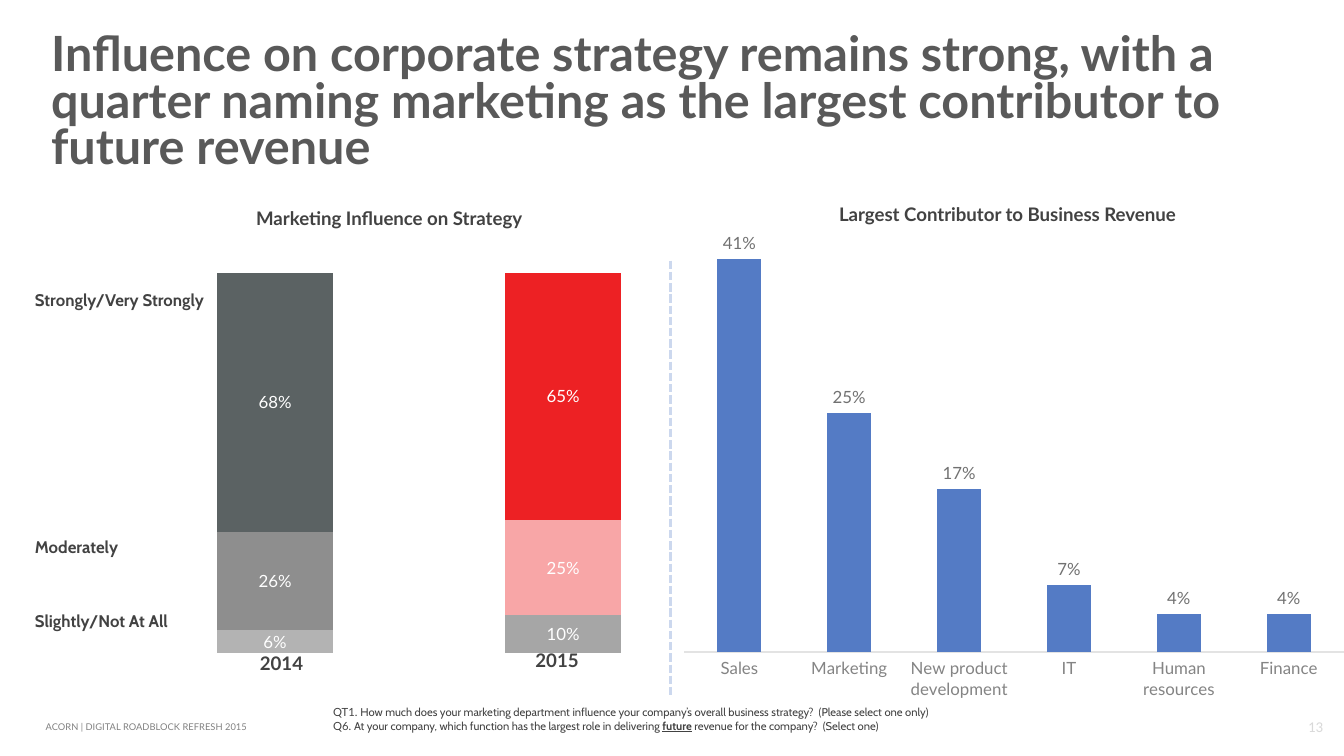
from dataclasses import dataclass

from lxml import etree
from pptx import Presentation
from pptx.chart.data import CategoryChartData
from pptx.dml.color import RGBColor
from pptx.enum.chart import XL_CHART_TYPE, XL_LABEL_POSITION, XL_TICK_MARK
from pptx.enum.dml import MSO_LINE
from pptx.enum.shapes import MSO_CONNECTOR
from pptx.enum.text import MSO_ANCHOR, PP_ALIGN
from pptx.oxml.ns import qn
from pptx.util import Inches, Pt

LEFT, CENTER = PP_ALIGN.LEFT, PP_ALIGN.CENTER
TOP, MIDDLE, BOTTOM = MSO_ANCHOR.TOP, MSO_ANCHOR.MIDDLE, MSO_ANCHOR.BOTTOM
COLUMN, STACKED = XL_CHART_TYPE.COLUMN_CLUSTERED, XL_CHART_TYPE.COLUMN_STACKED
OUTSIDE, NO_TICK = XL_LABEL_POSITION.OUTSIDE_END, XL_TICK_MARK.NONE
DASH, STRAIGHT = MSO_LINE.SQUARE_DOT, MSO_CONNECTOR.STRAIGHT

COLS, ROWS = 100, 56.25  # square grid cells, a tenth of an inch each


@dataclass(frozen=True)
class Theme:
    head: str = "Lato"
    body: str = "Cabin"
    num: str = "Calibri"
    title: str = "595959"
    ink: str = "424242"
    foot: str = "808080"
    page: str = "D9D9D9"
    axis: str = "848484"
    value: str = "717171"
    rule: str = "E3E3E3"
    split: str = "CCD8EE"
    bar: str = "547BC5"
    white: str = "FFFFFF"
    low: tuple = ("A6A6A6", "B3B3B3")
    mid: tuple = ("8E8E8E", "8E8E8E", "F8A6A7")
    high: tuple = ("849200", "5B6263", "ED2124")
    big: float = 26
    sub: float = 10
    label: float = 9
    pager: float = 8
    note: float = 6
    tiny: float = 5


def unit(cells):
    return Inches(cells / 10)


def rgb(code):
    return RGBColor.from_string(code)


class Deck:
    def __init__(self, theme):
        self.theme = theme
        self.prs = Presentation()
        self.prs.slide_width, self.prs.slide_height = unit(COLS), unit(ROWS)
        self.slide = self.prs.slides.add_slide(self.prs.slide_layouts[5])
        self.shapes = self.slide.shapes

    def font(self, font, size, color, face=None, bold=False):
        font.size, font.bold = Pt(size), bold
        font.name = face or self.theme.head
        font.color.rgb = rgb(color)

    def run(self, para, text, size, color, face=None, bold=False, under=False):
        run = para.add_run()
        run.text = text
        self.font(run.font, size, color, face, bold)
        if under:
            run.font.underline = True

    def title(self, box, text):
        shape = self.shapes.title
        shape.left, shape.top, shape.width, shape.height = map(unit, box)
        frame = shape.text_frame
        frame.word_wrap, frame.vertical_anchor = True, MIDDLE
        para = frame.paragraphs[0]
        para.alignment, para.line_spacing = LEFT, 0.8
        self.run(para, text, self.theme.big, self.theme.title, bold=True)

    def frame(self, box, anchor=TOP, inset=0):
        frame = self.shapes.add_textbox(*map(unit, box)).text_frame
        frame.word_wrap, frame.vertical_anchor = True, anchor
        if inset is not None:
            frame.margin_left = frame.margin_right = unit(inset)
            frame.margin_top = frame.margin_bottom = unit(inset)
        return frame

    def text(self, box, text, size, color, align=CENTER, anchor=TOP, **style):
        para = self.frame(box, anchor).paragraphs[0]
        para.alignment = align
        self.run(para, text, size, color, **style)

    def notes(self, box, lines):
        """Add one paragraph per line; each line is a list of (text, style)."""
        frame = self.frame(box, inset=None)
        for i, line in enumerate(lines):
            para = frame.add_paragraph() if i else frame.paragraphs[0]
            for text, style in line:
                self.run(para, text, self.theme.note, self.theme.ink, **style)

    def split(self, col, top, end):
        line = self.shapes.add_connector(STRAIGHT, *map(unit, (col, top, col, end)))
        line.line.color.rgb = rgb(self.theme.split)
        line.line.width, line.line.dash_style = Pt(1.5), DASH
        etree.SubElement(line._element.spPr, qn("a:effectLst"))

    def levels(self, box, rows):
        """Add a one-column table of (text, height, anchor, top margin)."""
        table = self.shapes.add_table(len(rows), 1, *map(unit, box)).table
        table.first_row = table.horz_banding = False
        for i, (text, height, anchor, margin) in enumerate(rows):
            table.rows[i].height = unit(height)
            cell = table.cell(i, 0)
            cell.fill.background()
            cell.vertical_anchor, cell.margin_top = anchor, unit(margin)
            self.run(cell.text_frame.paragraphs[0], text, self.theme.label,
                     self.theme.ink, self.theme.body, True)

    def chart(self, kind, box, area, cats, series, peak, tint):
        """Series are (values, (colour, *point colours)); area is percent of box."""
        data = CategoryChartData(number_format="0%")
        data.categories = cats
        for i, (vals, _) in enumerate(series, 1):
            data.add_series(f"Series {i}", vals)
        chart = self.shapes.add_chart(kind, *map(unit, box), data).chart
        chart.has_legend = chart.has_title = False
        self.font(chart.font, self.theme.sub, self.theme.ink, self.theme.body)
        axis = chart.value_axis
        axis.minimum_scale, axis.maximum_scale = 0, peak
        axis.has_major_gridlines = axis.visible = False
        plot = chart.plots[0]
        plot.vary_by_categories, plot.gap_width = False, 150
        if kind == STACKED:
            plot.overlap = 100
            chart.category_axis.visible = False
        else:
            self.base(chart.category_axis)
        for item, (_, (color, *points)) in zip(plot.series, series):
            self.paint(item, color)
            for i, shade in enumerate(points):
                self.paint(item.points[i], shade)
            labels = item.data_labels
            labels.show_value = True
            labels.number_format, labels.number_format_is_linked = "0%", False
            self.font(labels.font, self.theme.label, tint)
            if kind == COLUMN:
                labels.position = OUTSIDE
        self.place(chart, area)

    def base(self, axis):
        axis.major_tick_mark = axis.minor_tick_mark = NO_TICK
        axis.format.line.color.rgb = rgb(self.theme.rule)
        axis.format.line.width = Pt(0.75)
        self.font(axis.tick_labels.font, self.theme.label, self.theme.axis)

    def paint(self, item, color):
        item.format.fill.solid()
        item.format.fill.fore_color.rgb = rgb(color)

    def place(self, chart, area):
        """Pin the inner plot area to percentages of the chart frame."""
        plot = chart.element.find(f".//{qn('c:plotArea')}")
        for old in plot.findall(qn("c:layout")):
            plot.remove(old)
        layout = etree.Element(qn("c:layout"))
        plot.insert(0, layout)
        manual = etree.SubElement(layout, qn("c:manualLayout"))
        pairs = [("layoutTarget", "inner"), ("xMode", "edge"), ("yMode", "edge")]
        pairs += [(tag, share / 100) for tag, share in zip("xywh", area)]
        for tag, val in pairs:
            etree.SubElement(manual, qn(f"c:{tag}")).set("val", str(val))


def main():
    look = Theme()
    deck = Deck(look)
    deck.text((96.5, 53.4, 2.8, 1.3), "13", look.pager, look.page,
              anchor=BOTTOM, face=look.num)
    deck.text((3.4, 53.7, 41.6, 0.8), "ACORN | DIGITAL ROADBLOCK REFRESH 2015",
              look.tiny, look.foot, LEFT, MIDDLE)
    deck.chart(COLUMN, (49.9, 15.7, 51.1, 37.1), (2, 2, 96, 86.5),
               ["Sales", "Marketing", "New product development", "IT",
                "Human resources", "Finance"],
               [((0.41, 0.25, 0.17, 0.07, 0.04, 0.04), (look.bar,))],
               0.45, look.value)
    deck.levels((1.6, 21.1, 22.2, 30.3), [
        ("Strongly/Very Strongly", 9.4, TOP, 0.5),
        ("Moderately", 11.5, BOTTOM, 0.5),
        ("Slightly/Not At All", 9.4, TOP, 3.5)])
    deck.chart(STACKED, (8.9, 14, 44.7, 35.3), (1.9, 17.9, 95.9, 80.2), ["1", "2"],
               [((0.06, 0.1), look.low), ((0.26, 0.25), look.mid),
                ((0.68, 0.65), look.high)],
               1, look.white)
    deck.title((2.8, 2, 95, 11.5),
               "Influence on corporate strategy remains strong, with a quarter naming "
               "marketing as the largest contributor to future revenue")
    head, body = {"face": look.head}, {"face": look.body}
    deck.notes((23.8, 52, 60.2, 3), [
        [("QT1. ", head),
         ("How much does your marketing department influence your company’s overall "
          "business strategy?  (Please select one only)", body)],
        [("Q6. ", head),
         ("At your company, which function has the largest role in delivering ", body),
         ("future", {**body, "bold": True, "under": True}),
         (" revenue for the company?  (Select one)", body)]])
    deck.split(49.9, 19.4, 51.9)
    for left, top, width, text in (
            (7.9, 15.4, 42.1, "Marketing Influence on Strategy"),
            (53.9, 15.1, 42.1, "Largest Contributor to Business Revenue"),
            (17.1, 48.5, 7.7, "2014"),
            (37.6, 48.3, 7.7, "2015")):
        deck.text((left, top, width, 1.7), text, look.sub, look.ink, bold=True)
    deck.prs.save("out.pptx")


if __name__ == "__main__":
    main()
